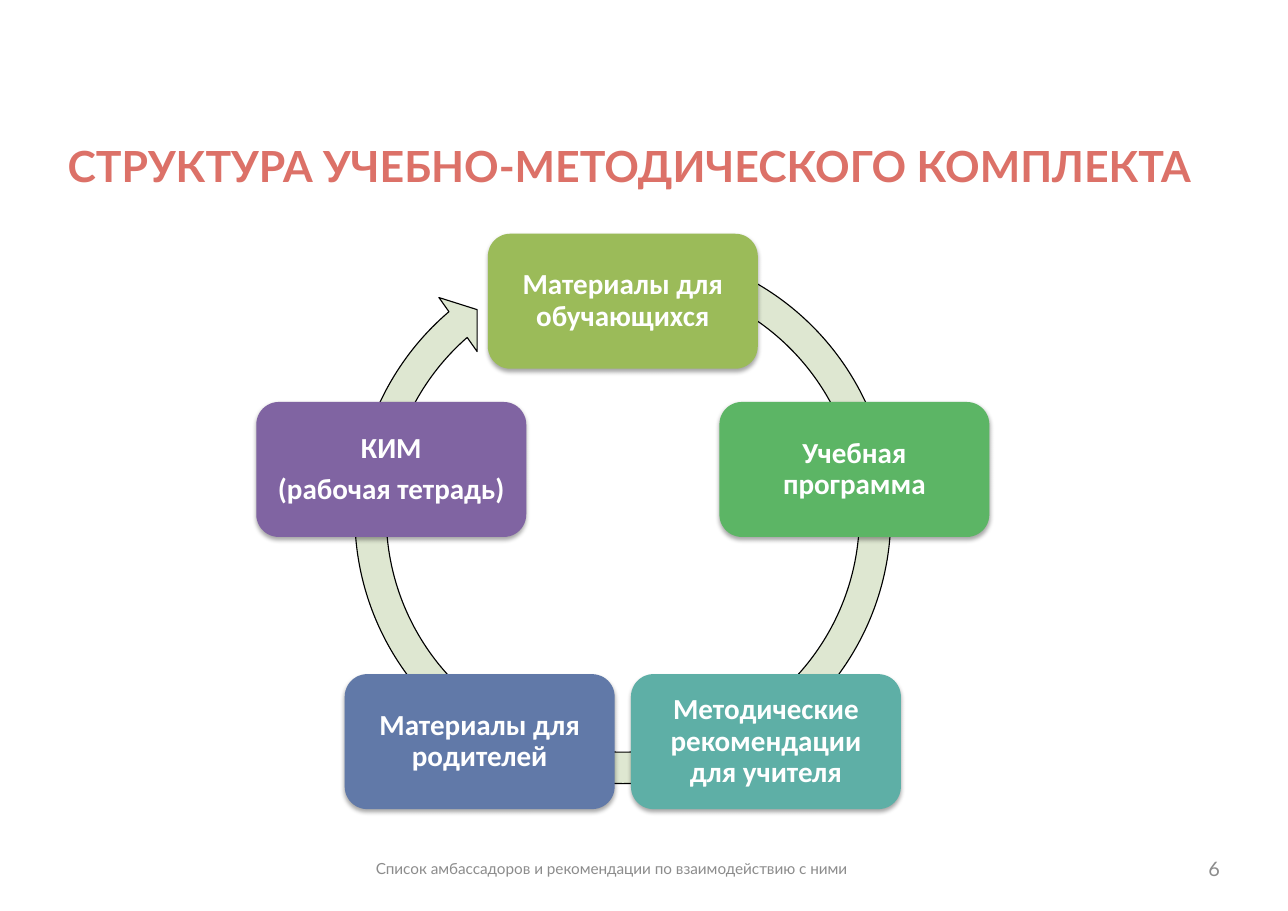
from math import cos, radians, sin

from lxml.etree import SubElement
from pptx import Presentation
from pptx.dml.color import RGBColor
from pptx.enum.shapes import MSO_SHAPE
from pptx.enum.text import MSO_ANCHOR, MSO_AUTO_SIZE, PP_ALIGN
from pptx.oxml.ns import qn
from pptx.util import Pt

CORAL = RGBColor(0xDC, 0x71, 0x68)
PALE_GREEN = RGBColor(0xDE, 0xE7, 0xD1)
OLIVE = RGBColor(0x9B, 0xBB, 0x59)
GREEN = RGBColor(0x5C, 0xB5, 0x65)
TEAL = RGBColor(0x5E, 0xAF, 0xA6)
BLUE = RGBColor(0x61, 0x79, 0xA8)
PURPLE = RGBColor(0x80, 0x64, 0xA2)
GRAY = RGBColor(0x8C, 0x8C, 0x8C)
BLACK = RGBColor(0, 0, 0)
WHITE = RGBColor(0xFF, 0xFF, 0xFF)

# Parts of the kit, clockwise from the top
KIT_PARTS = [
    (["Материалы для обучающихся"], OLIVE),
    (["Учебная программа"], GREEN),
    (["Методические рекомендации для учителя"], TEAL),
    (["Материалы для родителей"], BLUE),
    (["КИМ", "(рабочая тетрадь)"], PURPLE),
]
CENTER_X, CENTER_Y, RADIUS = 407, 356, 159.1
BOX_WIDTH, BOX_HEIGHT = 176.4, 88.2


class KitSlide:
    heading_font = "Lato"
    box_font = "Calibri"

    def __init__(self, deck):
        self.page = deck.slides.add_slide(deck.slide_layouts[5])

    def style(self, para, font, size, color, align, bold=False):
        para.alignment = align
        para.font.name = font
        para.font.size = Pt(size)
        para.font.bold = bold
        para.font.color.rgb = color

    def title(self, text, left, top, width, height):
        title = self.page.shapes.title
        title.left, title.top = Pt(left), Pt(top)
        title.width, title.height = Pt(width), Pt(height)
        frame = title.text_frame
        frame.text = text
        frame.auto_size = MSO_AUTO_SIZE.NONE
        frame.vertical_anchor = MSO_ANCHOR.TOP
        self.style(frame.paragraphs[0], self.heading_font, 28, CORAL, PP_ALIGN.CENTER, True)

    def shape(self, kind, left, top, width, height, fill):
        shape = self.page.shapes.add_shape(kind, Pt(left), Pt(top), Pt(width), Pt(height))
        shape.fill.solid()
        shape.fill.fore_color.rgb = fill
        shape.shadow.inherit = False
        return shape

    def ring(self, left, top, size):
        ring = self.shape(MSO_SHAPE.CIRCULAR_ARROW, left, top, size, size, PALE_GREEN)
        for index, value in enumerate((0.055, 3.307, 137.538, 173.994, 0.058)):
            ring.adjustments[index] = value
        ring.line.color.rgb = BLACK
        ring.line.width = Pt(0.75)

    def box(self, lines, center_x, center_y, fill):
        box = self.shape(MSO_SHAPE.ROUNDED_RECTANGLE, center_x - BOX_WIDTH / 2,
                         center_y - BOX_HEIGHT / 2, BOX_WIDTH, BOX_HEIGHT, fill)
        box.line.fill.background()
        self.soft_shadow(box)
        frame = box.text_frame
        frame.word_wrap = True
        frame.vertical_anchor = MSO_ANCHOR.MIDDLE
        frame.margin_left = frame.margin_right = Pt(5.8)
        frame.margin_top = frame.margin_bottom = Pt(5.8)
        frame.text = "\n".join(lines)
        for para in frame.paragraphs:
            para.line_spacing = 0.9
            para.space_after = Pt(6.65)
            self.style(para, self.box_font, 19, WHITE, PP_ALIGN.CENTER, True)

    def soft_shadow(self, shape):
        effects = shape._element.spPr.find(qn("a:effectLst"))
        shadow = SubElement(effects, qn("a:outerShdw"), blurRad=str(Pt(3.1)),
                            dist=str(Pt(1.8)), dir="5400000", rotWithShape="0")
        color = SubElement(shadow, qn("a:srgbClr"), val=str(BLACK))
        SubElement(color, qn("a:alpha"), val="35000")

    def footer(self, text, left, top, width, height, size, align):
        footer = self.page.shapes.add_textbox(Pt(left), Pt(top), Pt(width), Pt(height))
        frame = footer.text_frame
        frame.word_wrap = True
        frame.vertical_anchor = MSO_ANCHOR.MIDDLE
        frame.text = text
        self.style(frame.paragraphs[0], self.heading_font, size, GRAY, align)


def main():
    deck = Presentation()
    deck.slide_width, deck.slide_height = Pt(841.7), Pt(595.4)
    slide = KitSlide(deck)

    slide.title("СТРУКТУРА УЧЕБНО-МЕТОДИЧЕСКОГО КОМПЛЕКТА", 23, 87.8, 776.2, 46)

    # Cycle: the ring lies behind five evenly spaced boxes
    slide.ring(220.5, 150.5, 373)
    for index, (lines, fill) in enumerate(KIT_PARTS):
        angle = radians(index * 360 / len(KIT_PARTS))
        slide.box(lines, CENTER_X + RADIUS * sin(angle), CENTER_Y - RADIUS * cos(angle), fill)

    # Footer and page number
    slide.footer("Список амбассадоров и рекомендации по взаимодействию с ними",
                 238.5, 552, 369.4, 31.7, 10, PP_ALIGN.LEFT)
    slide.footer("6", 607.7, 551.8, 196.6, 31.7, 13, PP_ALIGN.RIGHT)

    deck.save("out.pptx")


if __name__ == "__main__":
    main()
